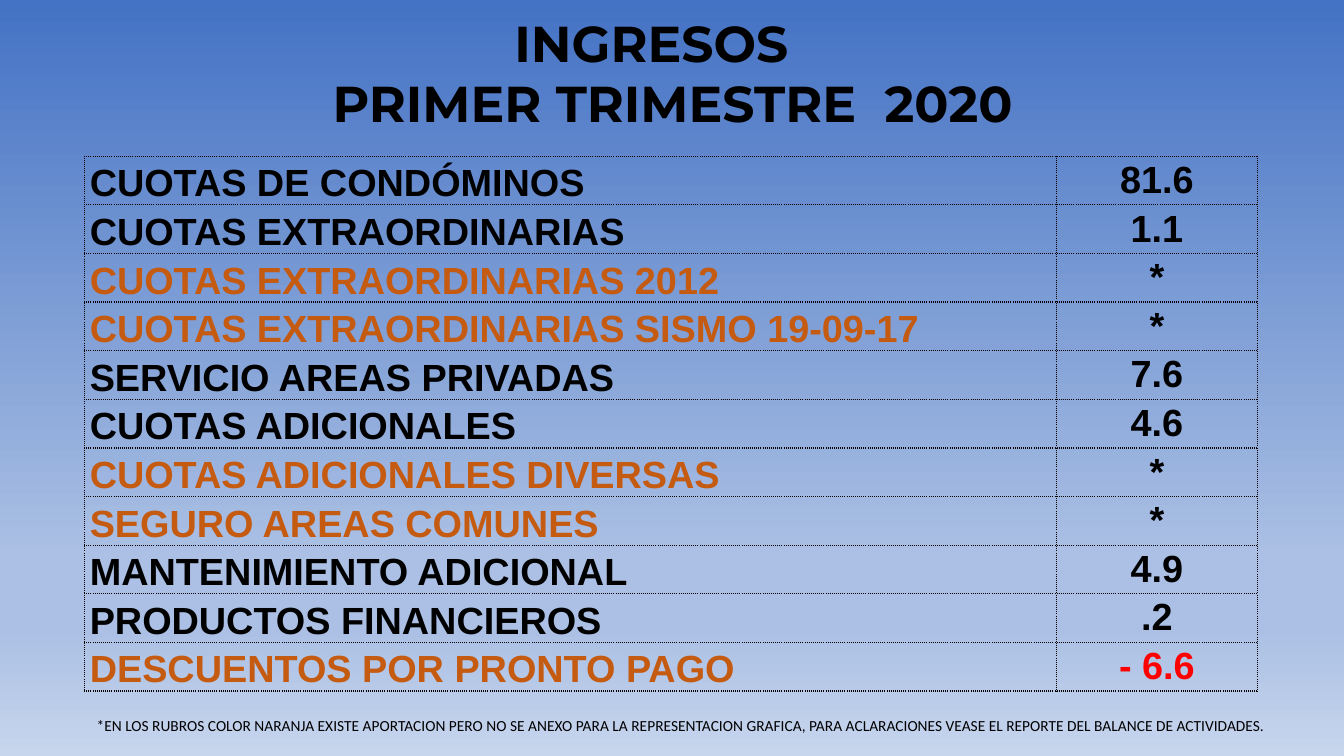
from copy import deepcopy

from lxml import etree
from pptx import Presentation
from pptx.dml.color import RGBColor
from pptx.enum import text
from pptx.oxml import ns
from pptx.util import Inches, Pt

BLACK = RGBColor(0x00, 0x00, 0x00)
ORANGE = RGBColor(0xC5, 0x5A, 0x11)
RED = RGBColor(0xFF, 0x00, 0x00)
SKY = [
    (0, RGBColor(0x44, 0x72, 0xC4)),
    (0.74, RGBColor(0xAB, 0xC0, 0xE4)),
    (0.83, RGBColor(0xAB, 0xC0, 0xE4)),
    (1, RGBColor(0xC7, 0xD5, 0xED)),
]

TITLE_FONT = {"name": "Montserrat", "size": Pt(36), "bold": True}
TABLE_FONT = {"name": "Arial", "size": Pt(27), "bold": True}
NOTE_FONT = {"name": "Calibri", "size": Pt(11), "bold": False}

# Concept, percentage, concept colour, percentage colour
INCOME = [
    ("CUOTAS DE CONDÓMINOS", "81.6", BLACK, BLACK),
    ("CUOTAS EXTRAORDINARIAS", "1.1", BLACK, BLACK),
    ("CUOTAS EXTRAORDINARIAS 2012", "*", ORANGE, BLACK),
    ("CUOTAS EXTRAORDINARIAS SISMO 19-09-17", "*", ORANGE, BLACK),
    ("SERVICIO AREAS PRIVADAS", "7.6", BLACK, BLACK),
    ("CUOTAS ADICIONALES", "4.6", BLACK, BLACK),
    ("CUOTAS ADICIONALES DIVERSAS", "*", ORANGE, BLACK),
    ("SEGURO AREAS COMUNES", "*", ORANGE, BLACK),
    ("MANTENIMIENTO ADICIONAL", "4.9", BLACK, BLACK),
    ("PRODUCTOS FINANCIEROS", ".2", BLACK, BLACK),
    ("DESCUENTOS POR PRONTO PAGO", "- 6.6", ORANGE, RED),
]
NOTE = (
    "*EN LOS RUBROS COLOR NARANJA EXISTE APORTACION PERO NO SE ANEXO PARA LA "
    "REPRESENTACION GRAFICA, PARA ACLARACIONES VEASE EL REPORTE DEL BALANCE DE ACTIVIDADES."
)


def apply_format(target, values):
    for name, value in values.items():
        setattr(target, name, value)


def write(paragraph, words, font, color=BLACK, align=text.PP_ALIGN.LEFT):
    paragraph.alignment = align
    run = paragraph.add_run()
    run.text = words
    apply_format(run.font, font)
    run.font.color.rgb = color


def paint_background(slide):
    fill = slide.background.fill
    fill.gradient()
    fill.gradient_angle = 270
    stop_list = slide.element.xpath(".//p:bg//a:gsLst")[0]
    while len(stop_list) < len(SKY):
        stop_list.append(deepcopy(stop_list[0]))
    for stop, (position, color) in zip(fill.gradient_stops, SKY):
        stop.position = position
        stop.color.rgb = color


def add_text_box(slide, left, top, width, height):
    frame = slide.shapes.add_textbox(*map(Inches, (left, top, width, height))).text_frame
    frame.word_wrap = True
    return frame


def add_title(slide):
    """Centre both lines, the second one further to the right by half its indent."""
    frame = add_text_box(slide, 2.7, 0.07, 7.52, 1.31)
    center = text.PP_ALIGN.CENTER
    write(frame.paragraphs[0], "INGRESOS", TITLE_FONT, align=center)
    period = frame.add_paragraph()
    write(period, "PRIMER TRIMESTRE  2020", TITLE_FONT, align=center)
    period._p.get_or_add_pPr().set("marL", str(Inches(0.42)))


def add_dotted_borders(cell):
    properties = cell._tc.get_or_add_tcPr()
    for index, side in enumerate(("lnL", "lnR", "lnT", "lnB")):
        line = etree.Element(ns.qn(f"a:{side}"), w=str(Pt(1)))
        fill = etree.SubElement(line, ns.qn("a:solidFill"))
        etree.SubElement(fill, ns.qn("a:srgbClr"), val=str(BLACK))
        etree.SubElement(line, ns.qn("a:prstDash"), val="sysDot")
        properties.insert(index, line)


def fill_cell(cell, words, color, align, anchor):
    apply_format(cell, {
        "margin_left": Inches(0.05),
        "margin_right": Inches(0.05),
        "margin_top": 0,
        "margin_bottom": 0,
        "vertical_anchor": anchor,
    })
    cell.fill.background()
    add_dotted_borders(cell)
    paragraph = cell.text_frame.paragraphs[0]
    paragraph.line_spacing = 1.07
    write(paragraph, words, TABLE_FONT, color, align)


def add_income_table(slide):
    frame = slide.shapes.add_table(
        len(INCOME), 2, Inches(0.84), Inches(1.55), Inches(11.63), Inches(5.3))
    table = frame.table
    apply_format(table, {"first_row": False, "horz_banding": False})
    for column, width in zip(table.columns, (9.64, 1.99)):
        column.width = Inches(width)
    for row, (concept, share, concept_color, share_color) in zip(table.rows, INCOME):
        fill_cell(row.cells[0], concept, concept_color,
                  text.PP_ALIGN.LEFT, text.MSO_ANCHOR.BOTTOM)
        fill_cell(row.cells[1], share, share_color,
                  text.PP_ALIGN.CENTER, text.MSO_ANCHOR.TOP)


def main():
    presentation = Presentation()
    presentation.slide_width = Inches(13.33)
    presentation.slide_height = Inches(7.5)
    slide = presentation.slides.add_slide(presentation.slide_layouts[6])
    paint_background(slide)
    add_title(slide)
    add_income_table(slide)
    note = add_text_box(slide, 0.86, 7.06, 12.22, 0.29)
    write(note.paragraphs[0], NOTE, NOTE_FONT)
    presentation.save("out.pptx")


if __name__ == "__main__":
    main()
